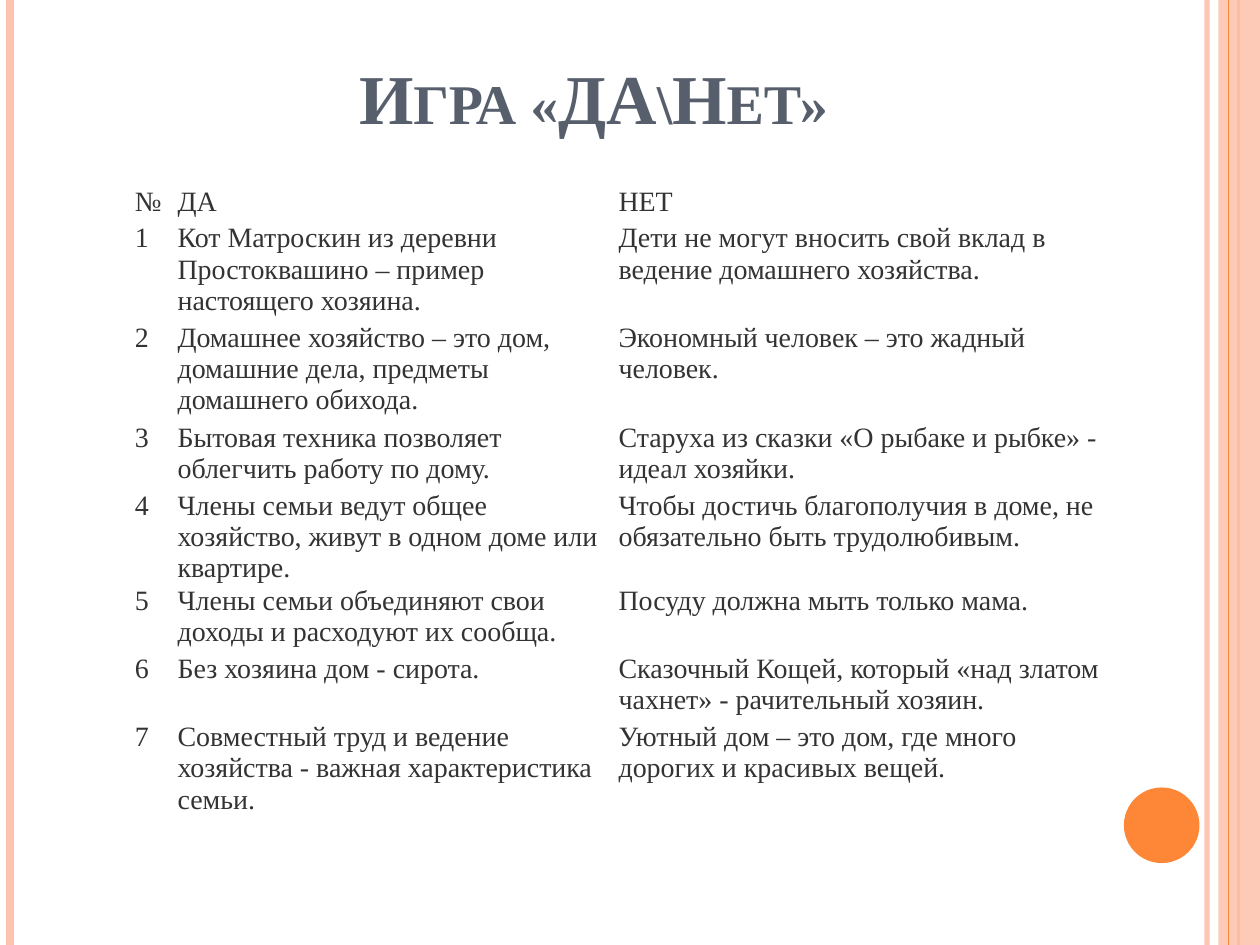
from lxml import etree
from pptx import Presentation
from pptx import util as u
from pptx.dml.color import RGBColor
from pptx.enum import shapes, text
from pptx.oxml.ns import qn

PEACH = RGBColor(0xFE, 0xC3, 0xAE)
ORANGE = RGBColor(0xFE, 0x86, 0x37)
SLATE = RGBColor(0x57, 0x5F, 0x6D)
DARK = RGBColor(0x33, 0x33, 0x33)
WHITE = RGBColor(0xFF, 0xFF, 0xFF)

WIDTHS = [0.34, 3.5, 3.88]
HEIGHTS = [0.29] + [0.79] * 2 + [0.54] * 5
ROWS = [
    ("№", "ДА", "НЕТ"),
    ("1", "Кот Матроскин из деревни Простоквашино – пример настоящего хозяина.",
     "Дети не могут вносить свой вклад в ведение домашнего хозяйства."),
    ("2", "Домашнее хозяйство – это дом, домашние дела, предметы домашнего обихода.",
     "Экономный человек – это жадный человек."),
    ("3", "Бытовая техника позволяет облегчить работу по дому.",
     "Старуха из сказки «О рыбаке и рыбке» - идеал хозяйки."),
    ("4", "Члены семьи ведут общее хозяйство, живут в одном доме или квартире.",
     "Чтобы достичь благополучия в доме, не обязательно быть трудолюбивым."),
    ("5", "Члены семьи объединяют свои доходы и расходуют их сообща.",
     "Посуду должна мыть только мама."),
    ("6", "Без хозяина дом - сирота.",
     "Сказочный Кощей, который «над златом чахнет» - рачительный хозяин."),
    ("7", "Совместный труд и ведение хозяйства - важная характеристика семьи.",
     "Уютный дом – это дом, где много дорогих и красивых вещей."),
]


class Deck:
    face = "Times New Roman"

    def __init__(self, wide, high):
        self.prs = Presentation()
        self.prs.slide_width = u.Inches(wide)
        self.prs.slide_height = u.Inches(high)
        self.high = high
        self.slide = self.prs.slides.add_slide(self.prs.slide_layouts[5])

    def style(self, para, size, color, bold=False):
        font = para.font
        font.name, font.size, font.bold = self.face, u.Pt(size), bold
        font.color.rgb = color
        return font

    def fade(self, props, alpha):
        for color in props.iter(qn("a:srgbClr")):
            etree.SubElement(color, qn("a:alpha"), val=str(alpha * 1000))

    def stripe(self, x, color, width, alpha=100):
        line = self.slide.shapes.add_connector(
            shapes.MSO_CONNECTOR.STRAIGHT,
            u.Inches(x), 0, u.Inches(x), u.Inches(self.high))
        line.line.color.rgb = color
        line.line.width = u.Pt(width)
        props = line._element.spPr
        if alpha < 100:
            self.fade(props, alpha)
        etree.SubElement(props, qn("a:effectLst"))

    def shape(self, kind, box, color, alpha=100):
        item = self.slide.shapes.add_shape(kind, *map(u.Inches, box))
        item.fill.solid()
        item.fill.fore_color.rgb = color
        item.line.fill.background()
        item.shadow.inherit = False
        if alpha < 100:
            self.fade(item._element.spPr, alpha)

    def title(self, words, box):
        item = self.slide.shapes.title
        item.left, item.top, item.width, item.height = map(u.Inches, box)
        frame = item.text_frame
        frame.text = words
        frame.word_wrap = True
        frame.auto_size = text.MSO_AUTO_SIZE.NONE
        frame.vertical_anchor = text.MSO_ANCHOR.BOTTOM
        para = frame.paragraphs[0]
        para.alignment = text.PP_ALIGN.CENTER
        self.style(para, 40, SLATE, True)
        para.runs[0]._r.get_or_add_rPr().set("cap", "small")

    def table(self, rows, x, y, widths, heights):
        grid = self.slide.shapes.add_table(
            len(rows), len(widths), u.Inches(x), u.Inches(y),
            u.Inches(sum(widths)), u.Inches(sum(heights))).table
        grid.first_row = grid.horz_banding = False
        for col, width in zip(grid.columns, widths):
            col.width = u.Inches(width)
        for row, height, words in zip(grid.rows, heights, rows):
            row.height = u.Inches(height)
            for cell, word in zip(row.cells, words):
                self.cell(cell, word)

    def cell(self, cell, word):
        cell.text = word
        cell.fill.solid()
        cell.fill.fore_color.rgb = WHITE
        cell.margin_left = cell.margin_right = u.Inches(0.01)
        cell.margin_top = cell.margin_bottom = u.Inches(0.01)
        self.style(cell.text_frame.paragraphs[0], 16, DARK)


def main():
    deck = Deck(10, 7.5)
    deck.stripe(9.58, PEACH, 3, 93)
    deck.stripe(0.08, PEACH, 4.5)
    deck.stripe(9.83, ORANGE, 1.5)
    deck.shape(shapes.MSO_SHAPE.RECTANGLE, (9.67, 0, 0.33, 7.5), PEACH, 87)
    deck.stripe(9.75, ORANGE, 0.75)
    deck.shape(shapes.MSO_SHAPE.OVAL, (8.92, 6.25, 0.6, 0.6), ORANGE)
    deck.title("Игра «ДА\\Нет»", (0.75, 0.3, 7.92, 0.85))
    deck.table(ROWS, 1.06, 1.47, WIDTHS, HEIGHTS)
    deck.prs.save("out.pptx")


if __name__ == "__main__":
    main()
